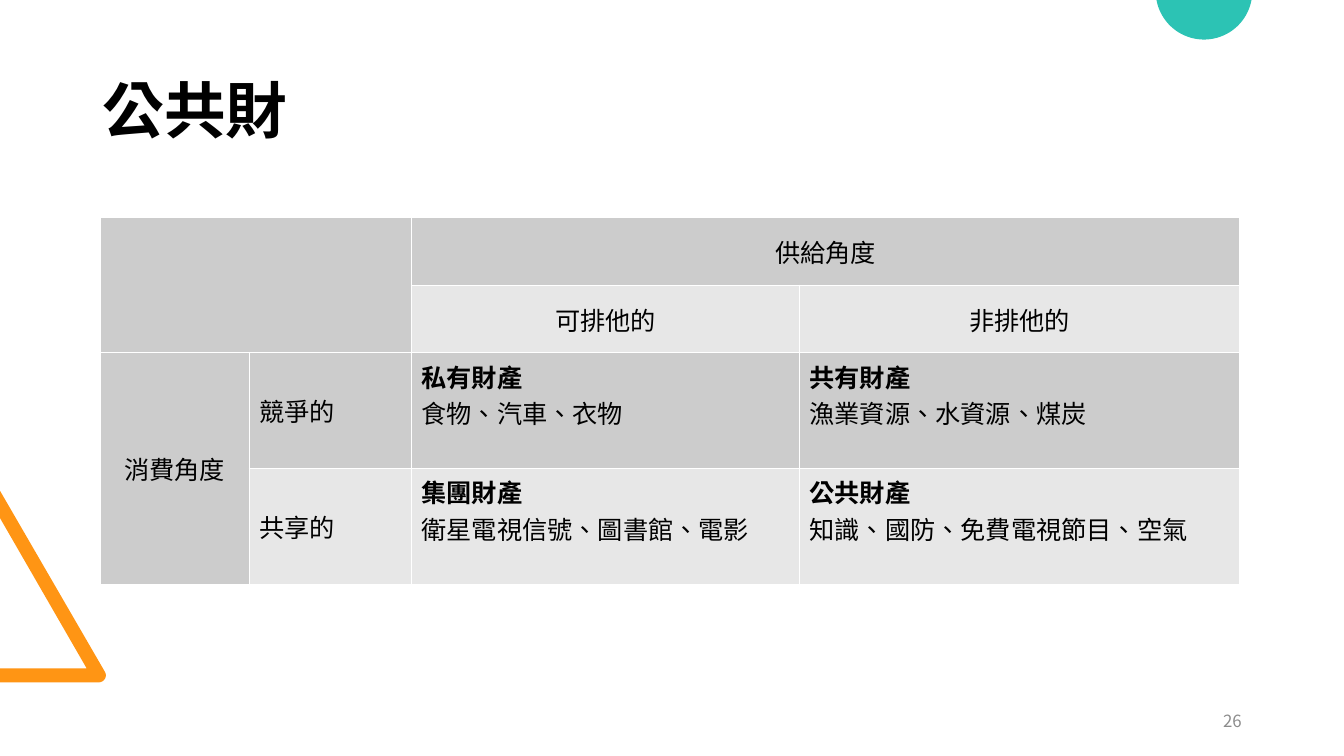
"""Build the public goods slide: a two-way table of property types."""
from dataclasses import dataclass
from math import asin, cos, degrees, radians, sin

from lxml.etree import SubElement
from pptx import Presentation
from pptx.dml.color import RGBColor as Rgb
from pptx.enum.text import MSO_ANCHOR as Anchor, MSO_AUTO_SIZE as AutoSize, PP_ALIGN as Align
from pptx.oxml import parse_xml
from pptx.oxml.ns import nsdecls, qn
from pptx.util import Pt


@dataclass(frozen=True)
class Theme:
    """Colours, fonts and type sizes."""
    ink: str = "000000"
    muted: str = "8C8C8C"
    border: str = "FFFFFF"
    bands: tuple = ("CCCCCC", "E7E7E7")
    orange: str = "FF9514"
    teal: str = "2CC3B4"
    cjk: str = "Noto Sans CJK TC"
    latin: str = "Arial"
    title_size: int = 44
    table_size: int = 18
    number_size: int = 12


THEME = Theme()
COLUMNS = (106.6, 115.9, 277.2, 314.6)
ROWS = (48.2, 48.2, 82.8, 82.8)
MERGES = (((0, 0), (1, 1)), ((0, 2), (0, 3)), ((2, 0), (3, 0)))
HEADINGS = {
    (0, 2): ("供給角度", Align.CENTER),
    (1, 2): ("可排他的", Align.CENTER),
    (1, 3): ("非排他的", Align.CENTER),
    (2, 0): ("消費角度", Align.CENTER),
    (2, 1): ("競爭的", Align.LEFT),
    (3, 1): ("共享的", Align.LEFT),
}
GOODS = {
    (2, 2): ("私有財產", "食物、汽車、衣物"),
    (2, 3): ("共有財產", "漁業資源、水資源、煤炭"),
    (3, 2): ("集團財產", "衛星電視信號、圖書館、電影"),
    (3, 3): ("公共財產", "知識、國防、免費電視節目、空氣"),
}


def apply(target, values):
    """Set each attribute named in a dict."""
    for name, value in values.items():
        setattr(target, name, value)


def write(paragraph, text, size, color, latin=THEME.cjk, bold=False, **layout):
    """Write one styled run and set its paragraph layout."""
    apply(paragraph, layout)
    run = paragraph.add_run()
    run.text = text
    apply(run.font, {"size": Pt(size), "bold": bold, "name": latin})
    run.font.color.rgb = Rgb.from_string(color)
    properties = run.font._element
    properties.set("lang", "zh-TW")
    SubElement(properties, qn("a:ea")).set("typeface", THEME.cjk)


def arc(center_x, center_y, radius, start, end, steps=40):
    """Return points on an arc, with angles in degrees clockwise from the right."""
    angles = [radians(start + (end - start) * step / steps) for step in range(steps + 1)]
    return [(center_x + radius * cos(a), center_y + radius * sin(a)) for a in angles]


def add_outline(slide, points, color):
    """Add a filled closed outline without a line."""
    corners = [(Pt(x), Pt(y)) for x, y in points]
    builder = slide.shapes.build_freeform(*corners[0])
    builder.add_line_segments(corners[1:], close=True)
    outline = builder.convert_to_shape()
    outline.shadow.inherit = False
    outline.fill.solid()
    outline.fill.fore_color.rgb = Rgb.from_string(color)
    outline.line.fill.background()


def add_decoration(slide):
    """Add the cut-off triangle and circle at the slide edges."""
    rounded_tip = arc(70.6, 482.4, 5, -30, 90)
    add_outline(slide, [(0, 487.4), (0, 477.4), (61.9, 477.4), (0, 370.1), (0, 350.6),
                        *rounded_tip], THEME.orange)
    radius, rise = 34.5, 6.2
    edge = degrees(asin(rise / radius))
    add_outline(slide, arc(860, -rise, radius, edge, 180 - edge), THEME.teal)


def add_title(slide, text):
    """Place and fill the title placeholder."""
    title = slide.shapes.title
    apply(title, {"left": Pt(66), "top": Pt(28.8), "width": Pt(828), "height": Pt(104.4)})
    apply(title.text_frame, {"vertical_anchor": Anchor.MIDDLE, "word_wrap": True,
                             "auto_size": AutoSize.NONE})
    write(title.text_frame.paragraphs[0], text, THEME.title_size, THEME.ink,
          bold=True, alignment=Align.LEFT, line_spacing=0.9)


def style_cell(cell, color):
    """Fill a cell and draw its four borders."""
    cell.fill.solid()
    cell.fill.fore_color.rgb = Rgb.from_string(color)
    for position, side in enumerate("LRTB"):
        border = parse_xml(
            f'<a:ln{side} {nsdecls("a")} w="{Pt(1)}"><a:solidFill>'
            f'<a:srgbClr val="{THEME.border}"/></a:solidFill></a:ln{side}>')
        cell._tc.get_or_add_tcPr().insert(position, border)


def add_goods_table(slide):
    """Add the table of goods by supply and consumption."""
    table = slide.shapes.add_table(len(ROWS), len(COLUMNS), Pt(71.4), Pt(155.6),
                                   Pt(sum(COLUMNS)), Pt(sum(ROWS))).table
    apply(table, {"first_row": False, "horz_banding": False})
    for column, width in zip(table.columns, COLUMNS):
        column.width = Pt(width)
    for index, (row, height) in enumerate(zip(table.rows, ROWS)):
        row.height = Pt(height)
        for cell in row.cells:
            style_cell(cell, THEME.bands[index % 2])
    for first, last in MERGES:
        table.cell(*first).merge(table.cell(*last))
    text_style = {"size": THEME.table_size, "color": THEME.ink, "latin": THEME.latin}
    for place, (heading, alignment) in HEADINGS.items():
        cell = table.cell(*place)
        cell.vertical_anchor = Anchor.MIDDLE
        write(cell.text_frame.paragraphs[0], heading, alignment=alignment, **text_style)
    for place, (kind, examples) in GOODS.items():
        frame = table.cell(*place).text_frame
        write(frame.paragraphs[0], kind, bold=True, **text_style)
        write(frame.add_paragraph(), examples, **text_style)


def add_page_number(slide, number):
    """Add the page number at the lower right."""
    frame = slide.shapes.add_textbox(Pt(678), Pt(500.4), Pt(216), Pt(28.8)).text_frame
    apply(frame, {"word_wrap": True, "vertical_anchor": Anchor.MIDDLE})
    write(frame.paragraphs[0], number, THEME.number_size, THEME.muted, alignment=Align.RIGHT)


def main():
    """Build and save the slide."""
    deck = Presentation()
    apply(deck, {"slide_width": Pt(960), "slide_height": Pt(540)})
    slide = deck.slides.add_slide(deck.slide_layouts[5])
    add_decoration(slide)
    add_title(slide, "公共財")
    add_goods_table(slide)
    add_page_number(slide, "26")
    deck.save("out.pptx")


if __name__ == "__main__":
    main()
